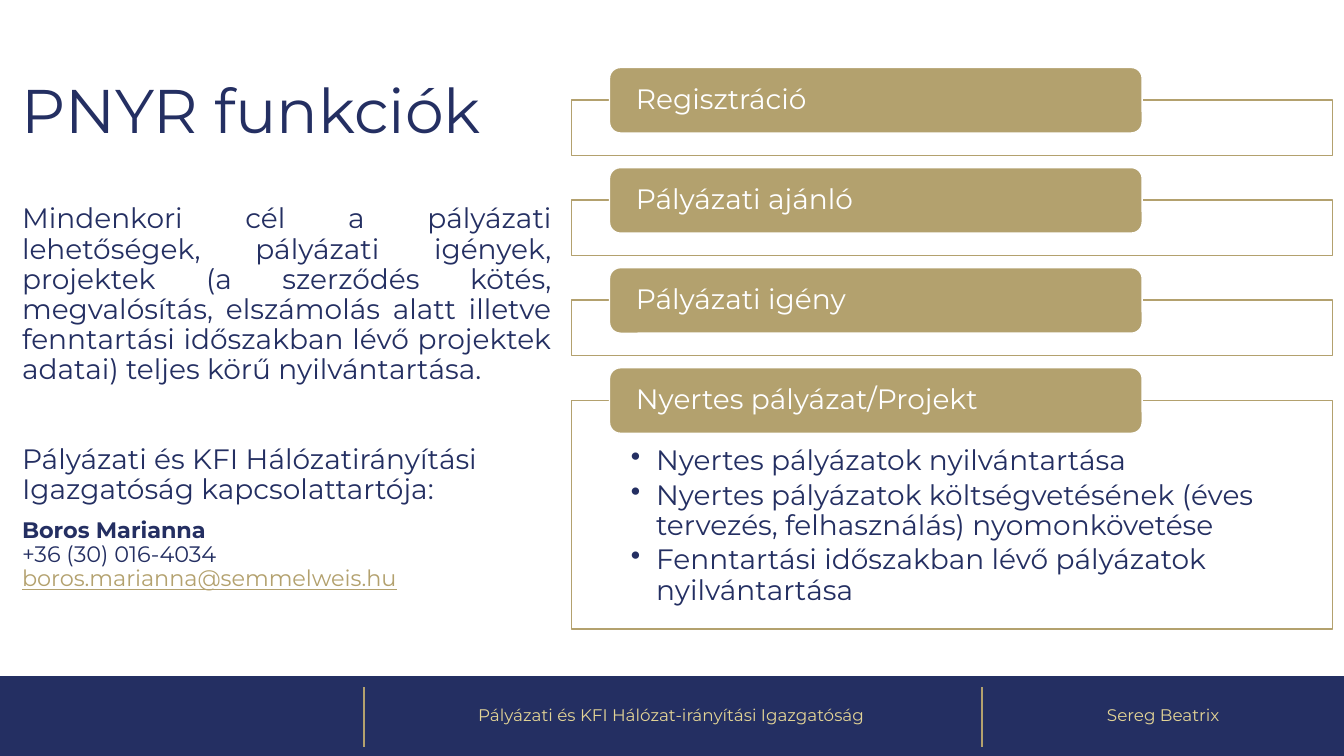
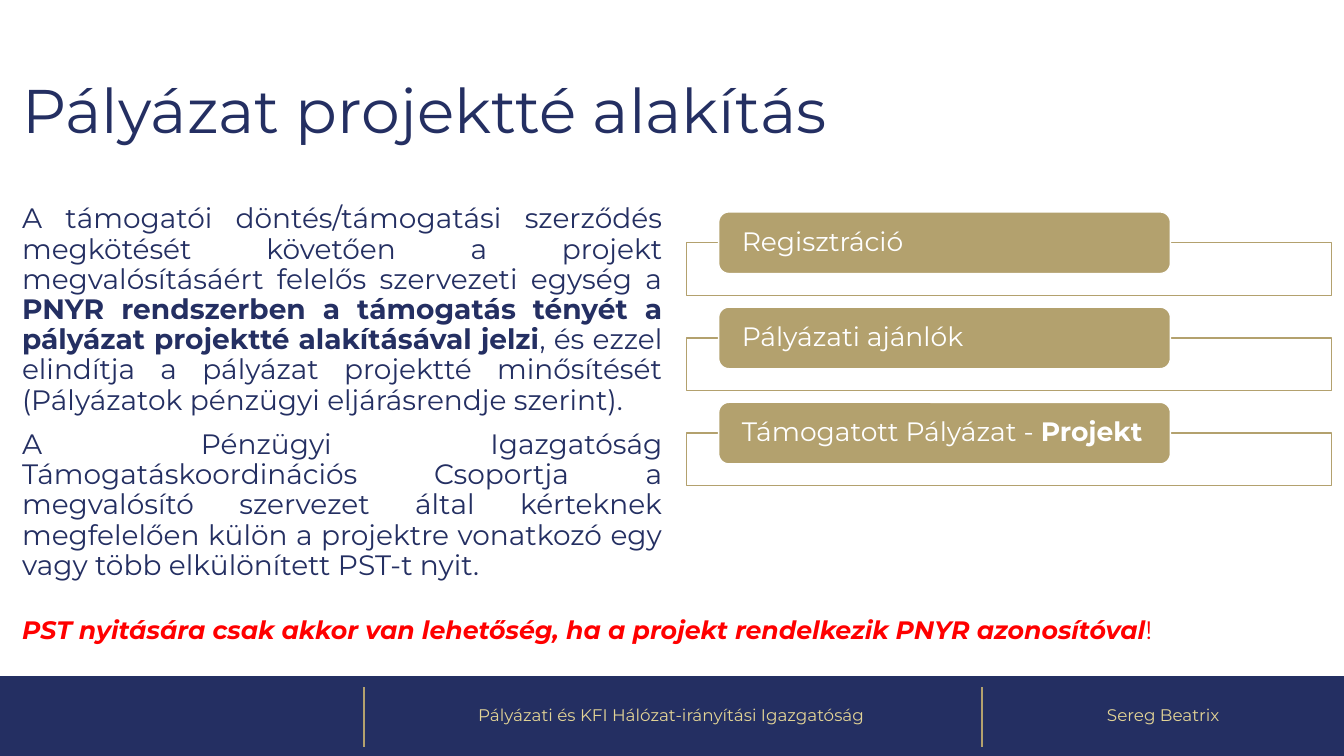
"""Build two slides on grant registration and project conversion."""
from lxml.etree import SubElement
from pptx import Presentation
from pptx.dml.color import RGBColor
from pptx.enum.shapes import MSO_CONNECTOR, MSO_SHAPE
from pptx.enum.text import MSO_ANCHOR, PP_ALIGN
from pptx.oxml.ns import qn
from pptx.util import Pt

HUES = {"navy": "242F62", "gold": "B3A16E", "pale": "E3D496",
        "white": "FFFFFF", "red": "FF0000"}
FONT = "Montserrat"
WIDE, HIGH = 960, 540
BAND = 483
EDGE = 8.64
INSET = (7.2, 3.6, 7.2, 3.6)
RULES = (260, 701.3)
FOOT = [
    ("Pályázati és KFI Hálózat-irányítási Igazgatóság", 258.5, 442.1),
    ("Sereg Beatrix", 701.3, 259.2),
]


def para(*runs, size=20, hue="navy", align=PP_ALIGN.LEFT,
         gap=0, lead=0.9, dot=False):
    """Describe a paragraph; each run is a text or a (text, style) pair."""
    return dict(runs=runs, size=size, hue=hue, align=align,
                gap=gap, lead=lead, dot=dot)


JUST = PP_ALIGN.JUSTIFY
SLIDES = [
    {
        "title": ("PNYR funkciók", 384.5),
        "body": (392.4, 326.2, [
            para("Mindenkori cél a pályázati lehetőségek, pályázati igények, "
                 "projektek (a szerződés kötés, megvalósítás, elszámolás alatt "
                 "illetve fenntartási időszakban lévő projektek adatai) teljes "
                 "körű nyilvántartása.", align=JUST),
            para("Pályázati és KFI Hálózatirányítási Igazgatóság "
                 "kapcsolattartója:", gap=42),
            para(("Boros Marianna", "b"), size=16, gap=10),
            para("+36 (30) 016-4034", size=16),
            para(("boros.marianna@semmelweis.hu", "u"), size=16, hue="gold"),
        ]),
        "stack": dict(left=408.2, top=71.4, wide=543.6, step=71.5, frame=39.6,
                      tab=46.8, rise=23.2, pad=16.6, size=20),
        "tabs": [
            (["Regisztráció"], []),
            (["Pályázati ajánló"], []),
            (["Pályázati igény"], []),
            (["Nyertes pályázat/Projekt"], [
                para("Nyertes pályázatok nyilvántartása", dot=True),
                para("Nyertes pályázatok költségvetésének (éves tervezés, "
                     "felhasználás) nyomonkövetése", gap=3, dot=True),
                para("Fenntartási időszakban lévő pályázatok nyilvántartása",
                     gap=3, dot=True),
            ]),
        ],
        "note": [],
    },
    {
        "title": ("Pályázat projektté alakítás", 913),
        "body": (471.6, 278.6, [
            para("A támogatói döntés/támogatási szerződés megkötését követően "
                 "a projekt megvalósításáért felelős szervezeti egység a ",
                 ("PNYR rendszerben a támogatás tényét a pályázat projektté "
                  "alakításával jelzi", "b"),
                 ", és ezzel elindítja a pályázat projektté minősítését "
                 "(Pályázatok pénzügyi eljárásrendje szerint).", align=JUST),
            para("A Pénzügyi Igazgatóság Támogatáskoordinációs Csoportja a "
                 "megvalósító szervezet által kérteknek megfelelően külön a "
                 "projektre vonatkozó egy vagy több elkülönített PST-t nyit.",
                 align=JUST, gap=10),
        ]),
        "stack": dict(left=490.3, top=173.4, wide=461, step=68, frame=37.5,
                      tab=44, rise=22, pad=14.4, size=19),
        "tabs": [
            (["Regisztráció"], []),
            (["Pályázati ajánlók"], []),
            (["Támogatott Pályázat - ", ("Projekt", "b")], []),
        ],
        "note": [
            para(("PST nyitására csak akkor van lehetőség, ha a projekt "
                  "rendelkezik PNYR azonosítóval", "bi"), "!",
                 size=18, hue="red", lead=1.0),
        ],
    },
]
DETAIL = 163.4


def color(name):
    """Return a palette colour."""
    return RGBColor.from_string(HUES[name])


def write(shape, paras, anchor=MSO_ANCHOR.TOP, inset=INSET):
    """Put formatted paragraphs into a shape."""
    frame = shape.text_frame
    frame.word_wrap = True
    frame.vertical_anchor = anchor
    (frame.margin_left, frame.margin_top,
     frame.margin_right, frame.margin_bottom) = map(Pt, inset)
    for num, item in enumerate(paras):
        line = frame.add_paragraph() if num else frame.paragraphs[0]
        line.alignment = item["align"]
        line.line_spacing = item["lead"]
        line.space_before = Pt(item["gap"])
        if item["dot"]:
            props = line._p.get_or_add_pPr()
            props.set("marL", str(Pt(18)))
            props.set("indent", str(-Pt(18)))
            SubElement(props, qn("a:buChar")).set("char", "•")
        for part in item["runs"]:
            text, style = (part, "") if isinstance(part, str) else part
            run = line.add_run()
            run.text = text
            font = run.font
            font.name, font.size = FONT, Pt(item["size"])
            font.color.rgb = color(item["hue"])
            font.bold, font.italic = "b" in style, "i" in style
            font.underline = "u" in style


def label(slide, box, paras, anchor=MSO_ANCHOR.TOP):
    """Add a text box."""
    write(slide.shapes.add_textbox(*map(Pt, box)), paras, anchor)


def block(slide, kind, box, fill, edge=None):
    """Add a filled shape with an optional one-point outline."""
    shape = slide.shapes.add_shape(kind, *map(Pt, box))
    shape.shadow.inherit = False
    shape.fill.solid()
    shape.fill.fore_color.rgb = color(fill)
    if edge:
        shape.line.color.rgb = color(edge)
        shape.line.width = Pt(1)
    else:
        shape.line.fill.background()
    return shape


def footer(slide):
    """Draw the band, its dividers and its labels."""
    tall = HIGH - BAND
    block(slide, MSO_SHAPE.RECTANGLE, (0, BAND, WIDE, tall), "navy")
    for left in RULES:
        rule = slide.shapes.add_connector(
            MSO_CONNECTOR.STRAIGHT, Pt(left), Pt(491), Pt(left), Pt(533.5))
        rule.line.color.rgb = color("gold")
        rule.line.width = Pt(1.5)
        SubElement(rule._element.spPr, qn("a:effectLst"))
    for text, left, wide in FOOT:
        label(slide, (left, BAND, wide, tall),
              [para(text, size=12, hue="pale", align=PP_ALIGN.CENTER)],
              MSO_ANCHOR.MIDDLE)


def stack(slide, tabs, left, top, wide, step, frame, tab, rise, pad, size):
    """Draw frames one below another, each with a tab on its top edge."""
    for num, (runs, items) in enumerate(tabs):
        y = top + num * step
        tall = DETAIL if items else frame
        panel = block(slide, MSO_SHAPE.RECTANGLE, (left, y, wide, tall),
                      "white", "gold")
        if items:
            write(panel, items, inset=(42.5, 33.1, 42.5, 11.5))
        head = block(slide, MSO_SHAPE.ROUNDED_RECTANGLE,
                     (left + wide * 0.05, y - rise, wide * 0.7, tab),
                     "gold", "white")
        write(head, [para(*runs, size=size, hue="white")],
              MSO_ANCHOR.MIDDLE, (pad, 0, pad, 0))


def main():
    """Build and save the deck."""
    deck = Presentation()
    deck.slide_width, deck.slide_height = Pt(WIDE), Pt(HIGH)
    for page in SLIDES:
        slide = deck.slides.add_slide(deck.slide_layouts[6])
        footer(slide)
        text, wide = page["title"]
        label(slide, (EDGE, 28.8, wide, 104.4), [para(text, size=44)],
              MSO_ANCHOR.MIDDLE)
        wide, tall, paras = page["body"]
        label(slide, (EDGE, 142.6, wide, tall), paras)
        stack(slide, page["tabs"], **page["stack"])
        if page["note"]:
            label(slide, (EDGE, 435.6, 913, 28.8), page["note"])
    deck.save("out.pptx")


if __name__ == "__main__":
    main()
